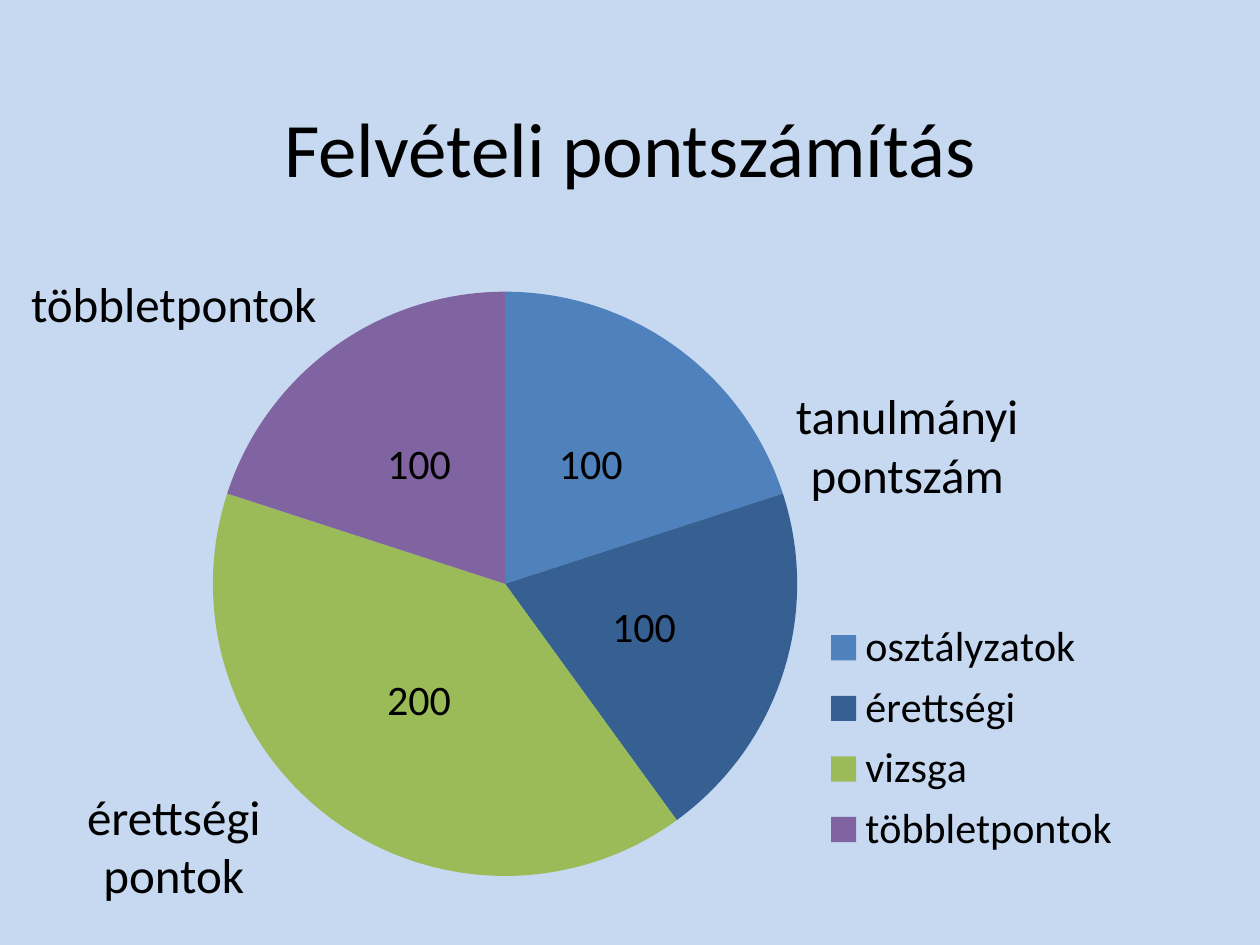
from pptx import Presentation
from pptx.chart.data import CategoryChartData
from pptx.dml.color import RGBColor
from pptx.enum.chart import XL_CHART_TYPE, XL_LABEL_POSITION, XL_LEGEND_POSITION
from pptx.enum.text import MSO_ANCHOR, PP_ALIGN
from pptx.oxml import parse_xml
from pptx.oxml.ns import nsdecls, qn
from pptx.util import Inches, Pt

COLORS = {
    "background": "C6D9F1",
    "text": "000000",
    "osztályzatok": "4F81BD",
    "érettségi": "376092",
    "vizsga": "9BBB59",
    "többletpontok": "8064A2",
}
POINTS = {"osztályzatok": 100, "érettségi": 100, "vizsga": 200, "többletpontok": 100}
CAPTIONS = [
    ("tanulmányi pontszám", 6.02, 3.01, 2.36, 1.04),
    ("érettségi pontok", 0.2, 6.19, 2.36, 1.04),
    ("többletpontok", 0.08, 2.12, 2.6, 0.57),
]


def paint(fill, name):
    fill.solid()
    fill.fore_color.rgb = RGBColor.from_string(COLORS[name])


def style_font(font, size):
    font.name = "Calibri"
    font.size = Pt(size)
    font.color.rgb = RGBColor.from_string(COLORS["text"])


def write_text(tf, text, size):
    tf.word_wrap = True
    tf.text = text
    p = tf.paragraphs[0]
    p.alignment = PP_ALIGN.CENTER
    style_font(p.font, size)


def add_title(s, text):
    sp = s.shapes.title
    sp.left, sp.top = Inches(0.75), Inches(0.36)
    sp.width, sp.height = Inches(8.5), Inches(1.61)
    write_text(sp.text_frame, text, 44)
    sp.text_frame.vertical_anchor = MSO_ANCHOR.MIDDLE


def add_caption(s, text, *box):
    sp = s.shapes.add_textbox(*map(Inches, box))
    write_text(sp.text_frame, text, 28)


def set_layout(element, index, x, y, w, h, target=""):
    for old in element.findall(qn("c:layout")):
        element.remove(old)
    element.insert(index, parse_xml(
        f'<c:layout {nsdecls("c")}><c:manualLayout>{target}'
        '<c:xMode val="edge"/><c:yMode val="edge"/>'
        f'<c:x val="{x}"/><c:y val="{y}"/><c:w val="{w}"/><c:h val="{h}"/>'
        '</c:manualLayout></c:layout>'))


def add_pie(s):
    data = CategoryChartData()
    data.categories = list(POINTS)
    data.add_series("Pontszám", list(POINTS.values()))
    box = map(Inches, (1.54, 2.1, 7.48, 5.12))
    chart = s.shapes.add_chart(XL_CHART_TYPE.PIE, *box, data).chart
    chart.has_title = False
    style_font(chart.font, 10)

    plot = chart.plots[0]
    plot.vary_by_categories = True
    for i, name in enumerate(POINTS):
        paint(plot.series[0].points[i].format.fill, name)
    plot.has_data_labels = True
    labels = plot.data_labels
    labels.show_value = True
    labels.show_percentage = False
    labels.position = XL_LABEL_POSITION.CENTER
    style_font(labels.font, 24)

    chart.has_legend = True
    legend = chart.legend
    legend.position = XL_LEGEND_POSITION.RIGHT
    legend.include_in_layout = False
    style_font(legend.font, 24)

    plot_area = chart.element.find(".//" + qn("c:plotArea"))
    set_layout(plot_area, 0, 0.02, 0.04, 0.62, 0.91, '<c:layoutTarget val="inner"/>')
    set_layout(chart.element.find(".//" + qn("c:legend")), 1, 0.66, 0.54, 0.33, 0.39)


def main():
    prs = Presentation()
    prs.slide_width, prs.slide_height = Inches(10), Inches(7.5)
    s = prs.slides.add_slide(prs.slide_layouts[0])
    paint(s.background.fill, "background")
    subtitle = s.placeholders[1].element
    subtitle.getparent().remove(subtitle)
    add_title(s, "Felvételi pontszámítás")
    add_pie(s)
    for caption in CAPTIONS:
        add_caption(s, *caption)
    prs.save("out.pptx")


if __name__ == "__main__":
    main()
